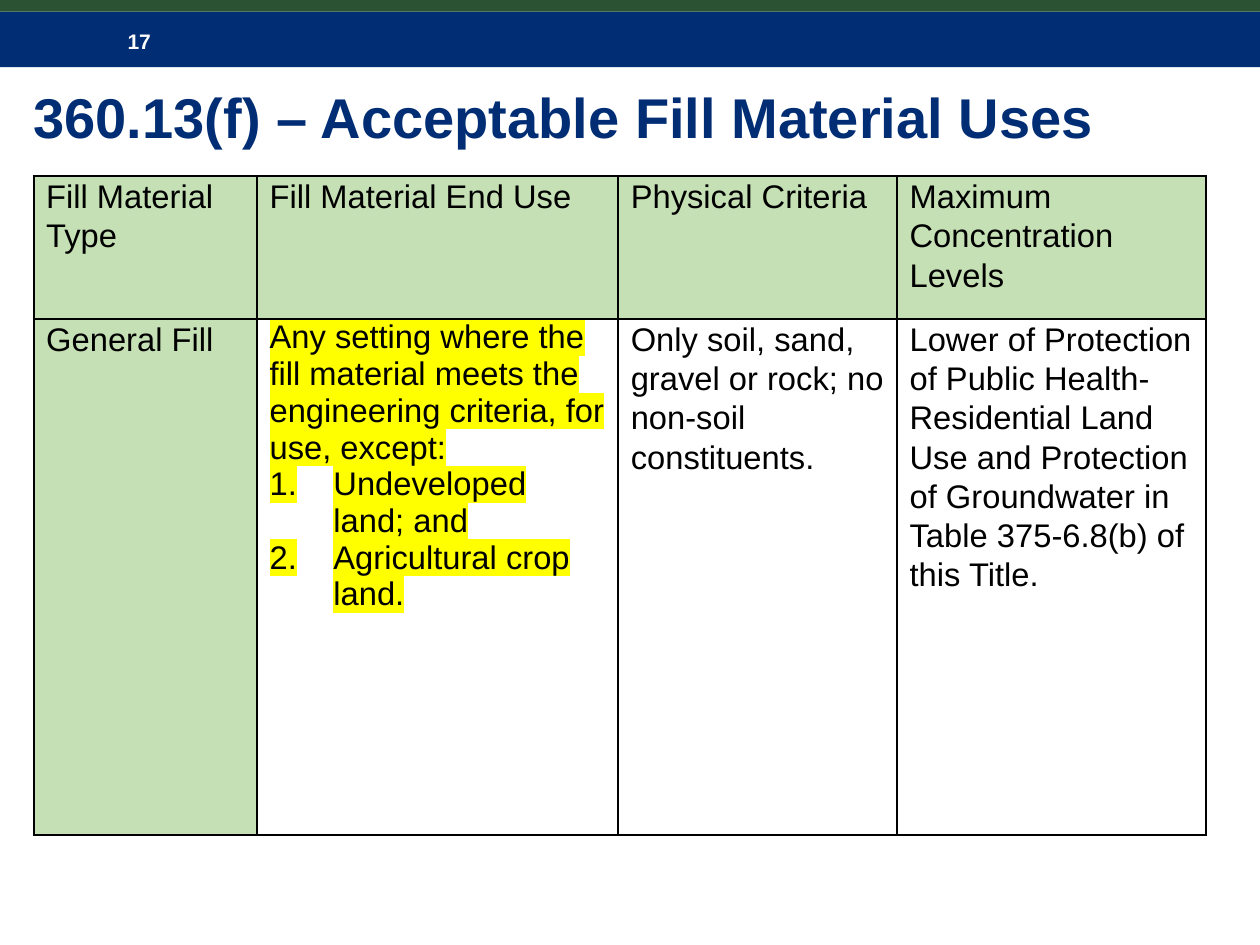
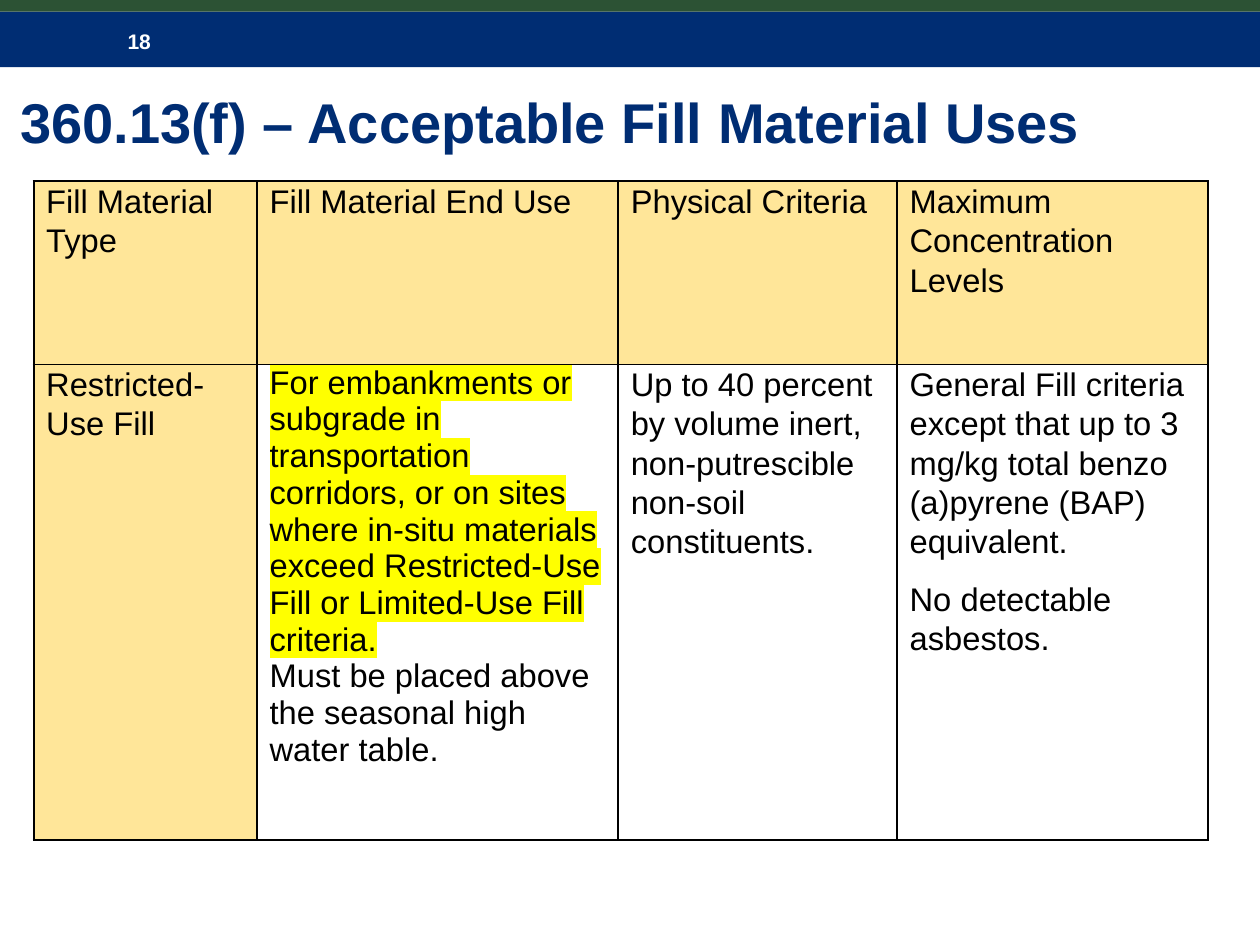
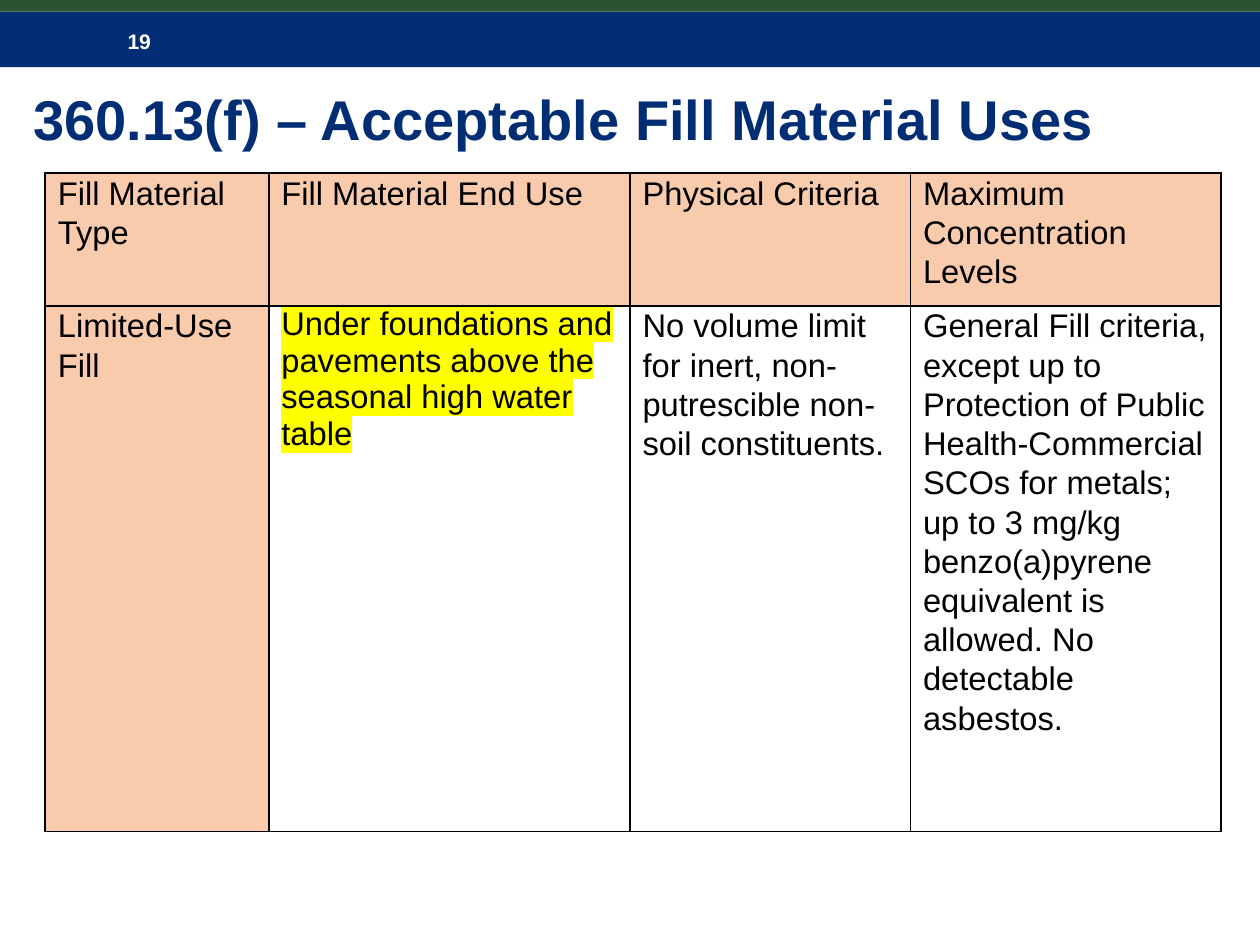
from dataclasses import dataclass

from lxml.etree import SubElement
from pptx import Presentation
from pptx.dml.color import RGBColor
from pptx.enum.shapes import MSO_SHAPE as Preset
from pptx.enum.text import MSO_ANCHOR as Anchor, PP_ALIGN as Align
from pptx.oxml.ns import qn
from pptx.util import Inches, Pt


@dataclass(frozen=True)
class Theme:
    """Colours, type sizes and spacing shared by the deck."""

    font: str = "Arial"
    navy: str = "002D73"
    forest: str = "2C5234"
    white: str = "FFFFFF"
    black: str = "000000"
    highlight: str = "FFFF00"
    title_size: int = 24
    table_size: int = 14
    number_size: int = 9
    border: float = 1
    cell_margin: float = 0.15 / 2
    cell_spacing: float = 1.07
    cell_gap: int = 8


@dataclass(frozen=True)
class Line:
    """One paragraph of the end-use column."""

    text: str
    marked: bool = True
    numbered: bool = False


@dataclass(frozen=True)
class FillPage:
    """Content and geometry of one fill-material slide."""

    number: int
    tint: str
    title_box: tuple
    table_origin: tuple
    columns: tuple
    rows: tuple
    fill_type: str
    end_use: tuple
    physical: str
    limits: tuple


THEME = Theme()
WIDTH = 7.5
HEIGHT = WIDTH * 3 / 4
TITLE = "360.13(f) – Acceptable Fill Material Uses"
HEADINGS = ("Fill Material Type", "Fill Material End Use", "Physical Criteria",
            "Maximum Concentration Levels")

PAGES = (
    FillPage(
        17, "C5E0B4", (0.2, 0.45, 7.06, 0.53), (0.2, 1.05),
        (1.33, 2.15, 1.66, 1.84), (0.85, 3.07),
        "General Fill",
        (Line("Any setting where the fill material meets the engineering "
              "criteria, for use, except:"),
         Line("Undeveloped land; and", numbered=True),
         Line("Agricultural crop land.", numbered=True)),
        "Only soil, sand, gravel or rock; no non-soil constituents.",
        ("Lower of Protection of Public Health-Residential Land Use and "
         "Protection of Groundwater in Table 375-6.8(b) of this Title.",),
    ),
    FillPage(
        18, "FFE699", (0.12, 0.45, 7.06, 0.59), (0.2, 1.08),
        (1.33, 2.15, 1.66, 1.85), (1.09, 2.83),
        "Restricted-Use Fill",
        (Line("For embankments or subgrade in transportation corridors, or on "
              "sites where in-situ materials exceed Restricted-Use Fill or "
              "Limited-Use Fill criteria."),
         Line("Must be placed above the seasonal high water table.", marked=False)),
        "Up to 40 percent by volume inert, non-putrescible non-soil constituents.",
        ("General Fill criteria except that up to 3 mg/kg total benzo (a)pyrene "
         "(BAP) equivalent.",
         "No detectable asbestos."),
    ),
    FillPage(
        19, "F8CBAD", (0.2, 0.49, 7.06, 0.48), (0.27, 1.03),
        (1.33, 2.15, 1.67, 1.85), (0.79, 3.13),
        "Limited-Use Fill",
        (Line("Under foundations and pavements above the seasonal high water table"),),
        "No volume limit for inert, non-putrescible non-soil constituents.",
        ("General Fill criteria, except up to Protection of Public "
         "Health-Commercial SCOs for metals; up to 3 mg/kg benzo(a)pyrene "
         "equivalent is allowed. No detectable asbestos.",),
    ),
)


def style_font(para, size, color, bold=False):
    """Set the font of a whole paragraph."""
    font = para.font
    font.name, font.size, font.bold = THEME.font, Pt(size), bold
    font.color.rgb = RGBColor.from_string(color)


def set_margins(target, left=0, top=0, right=0, bottom=0):
    """Set the insets of a text frame or table cell."""
    target.margin_left, target.margin_top = Inches(left), Inches(top)
    target.margin_right, target.margin_bottom = Inches(right), Inches(bottom)


def add_band(page, box, color):
    """Add a flat rectangle in one colour."""
    band = page.shapes.add_shape(Preset.RECTANGLE, *map(Inches, box))
    band.shadow.inherit = False
    band.fill.solid()
    band.fill.fore_color.rgb = RGBColor.from_string(color)
    band.line.fill.background()
    return band


def add_header(page, number):
    """Add the two top bands and the page number."""
    edge = 0.07
    frame = add_band(page, (0, edge, WIDTH, 0.33), THEME.navy).text_frame
    add_band(page, (0, 0, WIDTH, edge), THEME.forest)
    set_margins(frame, left=0.76, top=0.07, bottom=0.05)
    frame.vertical_anchor = Anchor.MIDDLE
    para = frame.paragraphs[0]
    para.text, para.alignment = str(number), Align.LEFT
    style_font(para, THEME.number_size, THEME.white, bold=True)


def add_title(page, box):
    """Add the slide title inside the box."""
    frame = page.shapes.add_textbox(*map(Inches, box)).text_frame
    frame.word_wrap, frame.vertical_anchor = True, Anchor.MIDDLE
    set_margins(frame)
    para = frame.paragraphs[0]
    para.text, para.line_spacing = TITLE, 0.9
    style_font(para, THEME.title_size, THEME.navy, bold=True)


def add_borders(cell):
    """Draw a thin line on all four sides of a cell."""
    properties = cell._tc.get_or_add_tcPr()
    for side in ("a:lnL", "a:lnR", "a:lnT", "a:lnB"):
        line = SubElement(properties, qn(side), w=str(Pt(THEME.border)))
        paint = SubElement(line, qn("a:solidFill"))
        SubElement(paint, qn("a:srgbClr"), val=THEME.black)


def number_paragraph(para):
    """Give a paragraph an automatic number with a hanging indent."""
    properties = para._p.get_or_add_pPr()
    indent = Inches(0.38)
    properties.set("marL", str(indent))
    properties.set("indent", str(-indent))
    SubElement(properties, qn("a:buFont"), typeface="+mj-lt")
    SubElement(properties, qn("a:buAutoNum"), type="arabicPeriod")


def highlight_run(span):
    """Mark a run with the highlight colour."""
    marker = SubElement(span._r.get_or_add_rPr(), qn("a:highlight"))
    SubElement(marker, qn("a:srgbClr"), val=THEME.highlight)


def write_line(para, line):
    """Write a plain, marked or numbered line, or a spaced string."""
    span = para.add_run()
    if isinstance(line, Line):
        span.text = line.text
        if line.numbered:
            number_paragraph(para)
        if line.marked:
            highlight_run(span)
    else:
        span.text = line
        para.line_spacing, para.space_after = THEME.cell_spacing, Pt(THEME.cell_gap)
    style_font(para, THEME.table_size, THEME.black)


def fill_cell(cell, lines, tint=None):
    """Format a cell and write its paragraphs."""
    set_margins(cell, left=THEME.cell_margin, right=THEME.cell_margin)
    add_borders(cell)
    if tint:
        cell.fill.solid()
        cell.fill.fore_color.rgb = RGBColor.from_string(tint)
    else:
        cell.fill.background()
    frame = cell.text_frame
    for index, line in enumerate(lines):
        write_line(frame.add_paragraph() if index else frame.paragraphs[0], line)


def add_criteria_table(page, content):
    """Add the criteria table, tinted in its first row and column."""
    size = sum(content.columns), sum(content.rows)
    table = page.shapes.add_table(
        len(content.rows), len(content.columns),
        *map(Inches, content.table_origin + size)).table
    table.first_row = table.horz_banding = False
    for column, width in zip(table.columns, content.columns):
        column.width = Inches(width)
    for row, height in zip(table.rows, content.rows):
        row.height = Inches(height)
    body = (content.fill_type,), content.end_use, (content.physical,), content.limits
    for index, (heading, lines) in enumerate(zip(HEADINGS, body)):
        fill_cell(table.cell(0, index), (heading,), content.tint)
        fill_cell(table.cell(1, index), lines, None if index else content.tint)


def add_fill_page(deck, content):
    """Build one fill-material slide."""
    page = deck.slides.add_slide(deck.slide_layouts[6])
    add_header(page, content.number)
    add_title(page, content.title_box)
    add_criteria_table(page, content)


def main():
    """Build and save the deck."""
    deck = Presentation()
    deck.slide_width, deck.slide_height = Inches(WIDTH), Inches(HEIGHT)
    for content in PAGES:
        add_fill_page(deck, content)
    deck.save("out.pptx")


if __name__ == "__main__":
    main()
